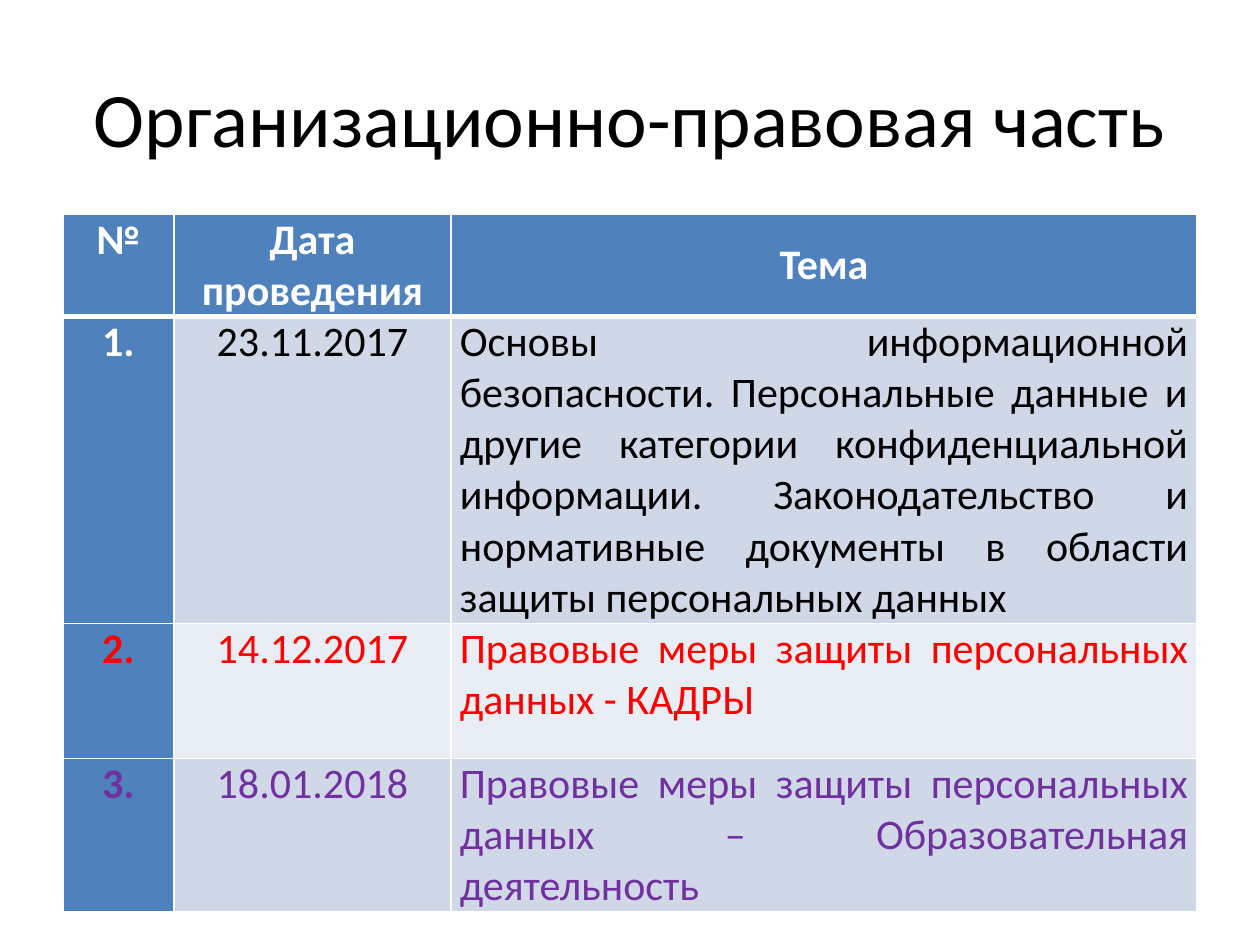
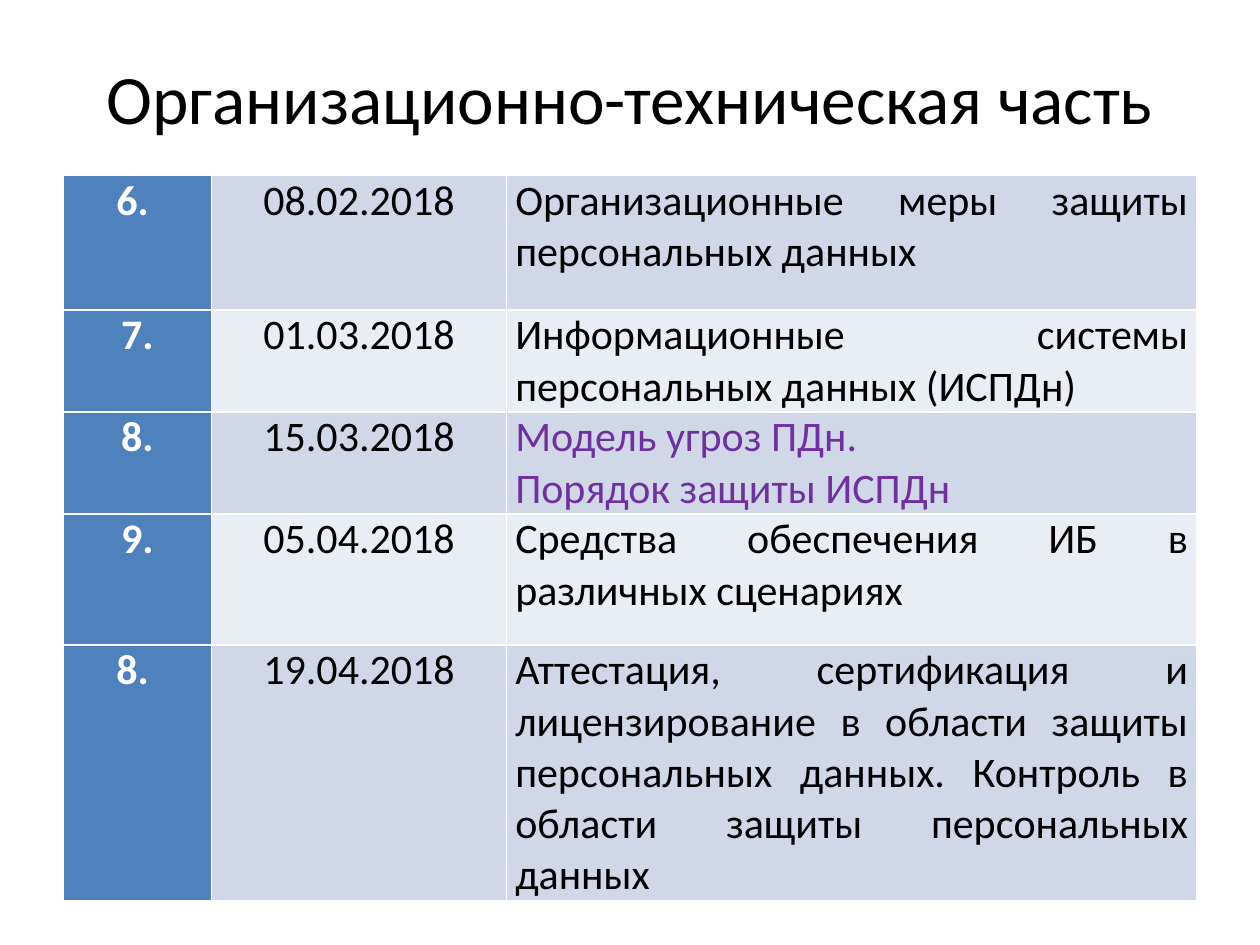
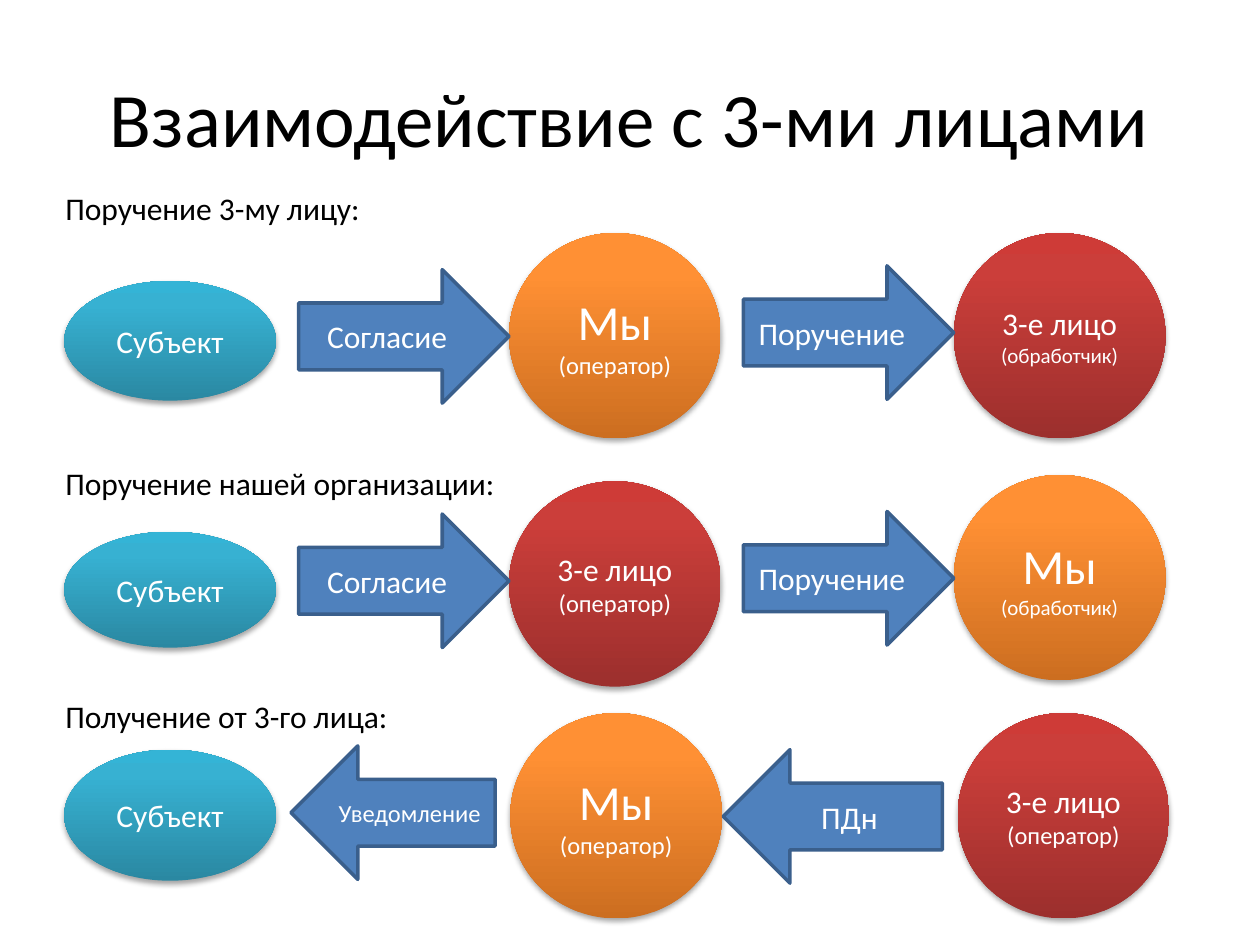
from lxml import etree
from pptx import Presentation
from pptx.dml.color import RGBColor
from pptx.enum.shapes import MSO_SHAPE
from pptx.enum.text import MSO_ANCHOR, PP_ALIGN
from pptx.oxml.ns import qn
from pptx.util import Inches, Pt

LEFT, CENTER, JUSTIFY = PP_ALIGN.LEFT, PP_ALIGN.CENTER, PP_ALIGN.JUSTIFY
TOP, MIDDLE = MSO_ANCHOR.TOP, MSO_ANCHOR.MIDDLE
ELLIPSE, ARROW = MSO_SHAPE.OVAL, MSO_SHAPE.RIGHT_ARROW

FONT = "Calibri"
COLORS = {
    "text": "000000", "white": "FFFFFF", "blue": "4F81BD", "outline": "3A5F8C",
    "band1": "D0D8E8", "band2": "E9EDF4", "red": "FF0000", "purple": "7030A0",
}
# Gradient stops from bottom to top: (percent, colour)
GRADIENTS = {
    "subject": [(0, "2A88A2"), (80, "37B1D2"), (100, "34B4D6")],
    "us": [(0, "CC6E20"), (80, "FF9034"), (100, "FF9136")],
    "third": [(0, "9C2F2D"), (80, "CB3E3A"), (100, "CE3B37")],
}


def rgb(name):
    return RGBColor.from_string(COLORS[name])


def sub(parent, tag, **attrs):
    return etree.SubElement(parent, qn(tag), {k: str(v) for k, v in attrs.items()})


def write(tf, paragraphs, color, align, anchor=TOP, bold=False):
    """Fill a text frame; each paragraph is a list of (text, size) runs."""
    tf.word_wrap = True
    tf.vertical_anchor = anchor
    for i, runs in enumerate(paragraphs):
        p = tf.paragraphs[0] if i == 0 else tf.add_paragraph()
        p.alignment = align
        for text, size in runs:
            r = p.add_run()
            r.text = text
            r.font.name, r.font.size, r.font.bold = FONT, Pt(size), bold
            r.font.color.rgb = rgb(color)


def add_text(slide, box, text, size, align=LEFT, anchor=TOP):
    sp = slide.shapes.add_textbox(*map(Inches, box))
    write(sp.text_frame, [[(text, size)]], "text", align, anchor)


def add_title(slide, text, height=1.25, size=44):
    add_text(slide, (0.5, 0.3, 9, height), text, size, CENTER, MIDDLE)


# --- Schedule tables ---

def set_borders(cell, top, bottom):
    tcPr = cell._tc.get_or_add_tcPr()
    for side, width in (("L", 1), ("R", 1), ("T", top), ("B", bottom)):
        ln = sub(tcPr, f"a:ln{side}", w=Pt(width))
        sub(sub(ln, "a:solidFill"), "a:srgbClr", val=COLORS["white"])


def style_cell(cell, lines, fill, color, align, anchor=TOP, bold=False, top=1, bottom=1):
    cell.margin_left = cell.margin_right = Inches(0.07)
    cell.margin_top = cell.margin_bottom = 0
    set_borders(cell, top, bottom)
    cell.fill.solid()
    cell.fill.fore_color.rgb = rgb(fill)
    write(cell.text_frame, [[(line, 24)] for line in lines], color, align, bold=bold)
    cell.vertical_anchor = anchor


def add_schedule(slide, left, top, widths, rows, header=None, header_height=0.81):
    """Rows are (height, number, date, topic lines, three text colours)."""
    heights = ([header_height] if header else []) + [row[0] for row in rows]
    size = sum(widths), sum(heights)
    table = slide.shapes.add_table(len(heights), len(widths),
                                   *map(Inches, (left, top, *size))).table
    table.first_row = bool(header)
    table.horz_banding = False
    for col, width in zip(table.columns, widths):
        col.width = Inches(width)
    for row, height in zip(table.rows, heights):
        row.height = Inches(height)
    # Header row
    for c, text in enumerate(header or []):
        style_cell(table.cell(0, c), [text], "blue", "white", CENTER,
                   MIDDLE if c else TOP, True, bottom=3)
    # Body rows with alternating bands
    first = 1 if header else 0
    for i, (_, number, date, topic, colors) in enumerate(rows):
        band = ("band1", "band2")[i % 2]
        edge = 3 if header and i == 0 else 1
        columns = [([number], "blue", CENTER), ([date], band, CENTER), (topic, band, JUSTIFY)]
        for c, (lines, fill, align) in enumerate(columns):
            style_cell(table.cell(first + i, c), lines, fill, colors[c], align,
                       bold=c == 0, top=edge)


# --- Interaction diagram ---

def add_node(slide, box, kind, paragraphs):
    sp = slide.shapes.add_shape(ELLIPSE, *map(Inches, box))
    sp.fill.gradient()
    sp.fill.gradient_angle = 90
    stops = sp._element.spPr.find(".//" + qn("a:gsLst"))
    for gs in list(stops):
        stops.remove(gs)
    for pos, color in GRADIENTS[kind]:
        sub(sub(stops, "a:gs", pos=pos * 1000), "a:srgbClr", val=color)
    sp.line.fill.background()
    # Soft shadow below
    sp.shadow.inherit = False
    effects = sp._element.spPr.find(qn("a:effectLst"))
    shadow = sub(effects, "a:outerShdw", blurRad=Pt(3.1), dist=Pt(1.8),
                 dir=90 * 60000, rotWithShape=0)
    sub(sub(shadow, "a:srgbClr", val=COLORS["text"]), "a:alpha", val=35000)
    write(sp.text_frame, paragraphs, "white", CENTER, MIDDLE)


def add_arrow(slide, box, text, size, backward):
    sp = slide.shapes.add_shape(ARROW, *map(Inches, box))
    sp.shadow.inherit = False
    sp.fill.solid()
    sp.fill.fore_color.rgb = rgb("blue")
    sp.line.color.rgb = rgb("outline")
    sp.line.width = Pt(2)
    if backward:
        sp._element.spPr.find(qn("a:xfrm")).set("flipH", "1")
    write(sp.text_frame, [[(text, size)]], "white", CENTER, MIDDLE)


def add_scenario(slide, left, top, caption, subject, nodes, arrows, backward=False):
    """Subject is (dy, height); nodes and arrows are placed from the row's corner."""
    add_text(slide, (left, top, 4.15, 0.4), caption, 18)
    dy, height = subject
    add_node(slide, (left + 0.09, top + dy, 1.68, height), "subject", [[("Субъект", 18)]])
    for dx, dy, kind, paragraphs in nodes:
        add_node(slide, (left + dx, top + dy, 1.68, 1.63), kind, paragraphs)
    for dx, dy, width, text, size in arrows:
        add_arrow(slide, (left + dx, top + dy, width, 1.06), text, size, backward)


# --- Content ---

PLAIN = ("white", "text", "text")
HEADER = ["№", "Дата проведения", "Тема"]
LEGAL = [
    (2.44, "1.", "23.11.2017",
     ["Основы информационной безопасности. Персональные данные и другие категории "
      "конфиденциальной информации. Законодательство и нормативные документы в области "
      "защиты персональных данных"], PLAIN),
    (1.07, "2.", "14.12.2017", ["Правовые меры защиты персональных данных - КАДРЫ"],
     ("red",) * 3),
    (1.22, "3.", "18.01.2018",
     ["Правовые меры защиты персональных данных – Образовательная деятельность"],
     ("purple",) * 3),
]
TECHNICAL = [
    (1.07, "6. ", "08.02.2018", ["Организационные меры защиты персональных данных"], PLAIN),
    (0.81, "7.", "01.03.2018", ["Информационные системы персональных данных (ИСПДн)"], PLAIN),
    (0.81, "8.", "15.03.2018", ["Модель угроз ПДн.", "Порядок защиты ИСПДн"],
     ("white", "text", "purple")),
    (1.04, "9.", "05.04.2018", ["Средства обеспечения ИБ в различных сценариях "], PLAIN),
    (2.03, "8. ", "19.04.2018",
     ["Аттестация, сертификация и лицензирование в области защиты персональных данных. "
      "Контроль в области защиты персональных данных"], PLAIN),
]

US, THIRD = ("Мы", 28), ("3-е лицо", 18)
OPERATOR, PROCESSOR = ("(оператор)", 14), ("(обработчик)", 12)
MID, RIGHT = 3.62, 7.15          # node columns
CONSENT, ORDER = 1.95, 5.48      # arrow columns
SCENARIOS = [
    dict(top=1.45, caption="Поручение 3-му лицу:", subject=(0.78, 0.95),
         nodes=[(MID, 0.4, "us", [[("Мы ", 28), OPERATOR]]),
                (RIGHT, 0.4, "third", [[THIRD], [PROCESSOR]])],
         arrows=[(CONSENT, 0.69, 1.67, "Согласие", 18),
                 (ORDER, 0.66, 1.67, "Поручение", 18)]),
    dict(top=3.63, caption="Поручение нашей организации:", subject=(0.59, 0.92),
         nodes=[(RIGHT, 0.14, "us", [[US], [PROCESSOR]]),
                (MID, 0.19, "third", [[THIRD], [OPERATOR]])],
         arrows=[(CONSENT, 0.45, 1.67, "Согласие", 18),
                 (ORDER, 0.43, 1.67, "Поручение", 18)]),
    dict(top=5.48, caption="Получение от 3-го лица:", subject=(0.47, 1.04), backward=True,
         nodes=[(MID + 0.01, 0.18, "us", [[US], [OPERATOR]]),
                (RIGHT + 0.03, 0.18, "third", [[THIRD], [OPERATOR]])],
         arrows=[(1.89, 0.44, 1.62, "Уведомление", 14),
                 (5.32, 0.47, 1.74, "ПДн", 18)]),
]


def main():
    prs = Presentation()
    prs.slide_width, prs.slide_height = Inches(10), Inches(7.5)
    legal, technical, interaction = (
        prs.slides.add_slide(prs.slide_layouts[6]) for _ in range(3))

    add_title(legal, "Организационно-правовая часть")
    add_schedule(legal, 0.5, 1.7, [0.88, 2.2, 5.92], LEGAL, HEADER)

    add_title(technical, "Организационно-техническая часть", 0.93, 39.6)
    add_schedule(technical, 0.5, 1.39, [1.18, 2.34, 5.48], TECHNICAL)

    add_title(interaction, "Взаимодействие с 3-ми лицами")
    for scenario in SCENARIOS:
        add_scenario(interaction, 0.42, **scenario)

    prs.save("out.pptx")


if __name__ == "__main__":
    main()
